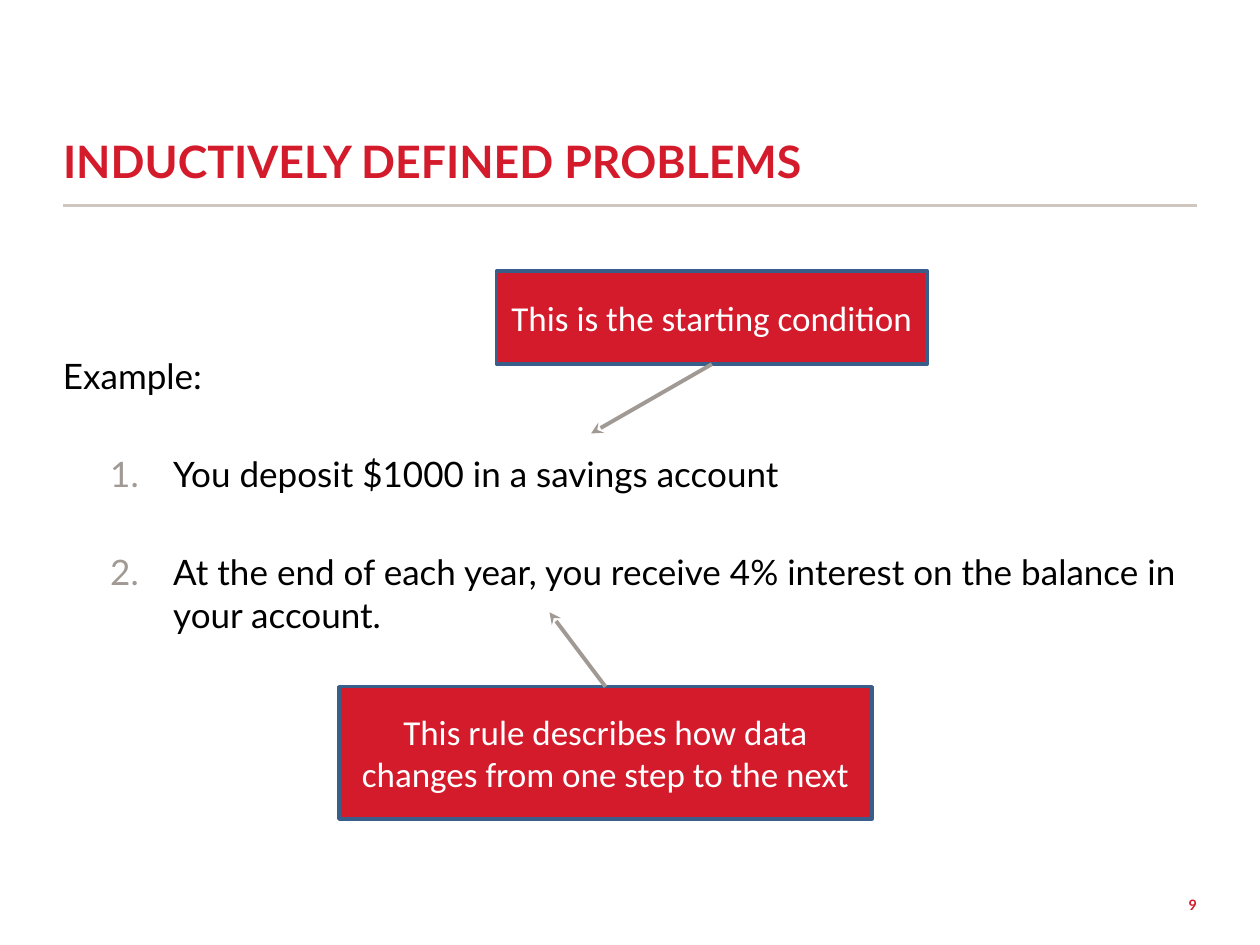
from lxml import etree
from pptx import Presentation
from pptx.dml.color import RGBColor
from pptx.enum import shapes, text
from pptx.oxml.ns import qn
from pptx.util import Pt

RED, GREY, RULE, OUTLINE = "D41B2C", "A19994", "CFC7BF", "395E8A"
LEFT, WIDTH = 36, 648
ALIGN, ANCHOR = text.PP_ALIGN, text.MSO_ANCHOR


def color(value):
    return RGBColor.from_string(value)


def write(frame, paragraphs, size=20, font="Lato", ink="000000", bold=False,
          align=ALIGN.LEFT, anchor=ANCHOR.TOP, inset=(0, 0), spacing=None, after=0):
    frame.word_wrap = True
    frame.auto_size = text.MSO_AUTO_SIZE.NONE
    frame.vertical_anchor = anchor
    frame.margin_left = frame.margin_right = Pt(inset[0])
    frame.margin_top = frame.margin_bottom = Pt(inset[1])
    for i, words in enumerate(paragraphs):
        line = frame.add_paragraph() if i else frame.paragraphs[0]
        line.alignment, line.space_after = align, Pt(after)
        if spacing:
            line.line_spacing = spacing
        run = line.add_run()
        run.text = words
        run.font.size, run.font.name, run.font.bold = Pt(size), font, bold
        run.font.color.rgb = color(ink)


def add_text(slide, box, paragraphs, **style):
    frame = slide.shapes.add_textbox(*map(Pt, box)).text_frame
    write(frame, paragraphs, **style)
    return frame


def add_line(slide, start, end, ink, weight, arrow=False):
    line = slide.shapes.add_connector(
        shapes.MSO_CONNECTOR.STRAIGHT, *map(Pt, (*start, *end)))
    line.line.color.rgb, line.line.width = color(ink), Pt(weight)
    if arrow:
        etree.SubElement(line.line._get_or_add_ln(), qn("a:tailEnd"), type="stealth")
    etree.SubElement(line._element.spPr, qn("a:effectLst"))


def number(paragraph):
    props = paragraph._p.get_or_add_pPr()
    props.set("marL", str(Pt(63)))
    props.set("indent", str(Pt(-36)))
    bullet_color = etree.SubElement(props, qn("a:buClr"))
    etree.SubElement(bullet_color, qn("a:srgbClr"), val=GREY)
    etree.SubElement(props, qn("a:buFont"), typeface="+mj-lt")
    etree.SubElement(props, qn("a:buAutoNum"), type="arabicPeriod")


def add_heading(slide, box, words):
    left, top, width, height = box
    title = slide.shapes.title
    title.left, title.top, title.width, title.height = map(Pt, box)
    write(title.text_frame, [words], size=25.5, ink=RED, bold=True, anchor=ANCHOR.BOTTOM)
    rule_y = top + height + 10
    add_line(slide, (left, rule_y), (left + width, rule_y), RULE, 2)


def add_example(slide, box, intro, steps):
    frame = add_text(slide, box, [intro, *steps], spacing=1.04, after=31)
    for step in frame.paragraphs[1:]:
        number(step)


def add_callout(slide, box, words, reach):
    """Boxed remark; its arrow leaves the top or bottom edge by the offset reach."""
    left, top, width, height = box
    note = slide.shapes.add_shape(shapes.MSO_SHAPE.RECTANGLE, *map(Pt, box))
    note.shadow.inherit = False
    note.fill.solid()
    note.fill.fore_color.rgb = color(RED)
    note.line.color.rgb, note.line.width = color(OUTLINE), Pt(2)
    write(note.text_frame, [words], font="Calibri", ink="FFFFFF",
          align=ALIGN.CENTER, anchor=ANCHOR.MIDDLE, inset=(7.2, 3.6))
    dx, dy = reach
    x, y = left + width / 2, top + (height if dy > 0 else 0)
    add_line(slide, (x, y), (x + dx, y + dy), GREY, 2.25, arrow=True)


def main():
    deck = Presentation()
    deck.slide_width, deck.slide_height = Pt(720), Pt(540)
    slide = deck.slides.add_slide(deck.slide_layouts.get_by_name("Title Only"))

    # Title and rule
    add_heading(slide, (LEFT, 39, WIDTH, 68.3), "INDUCTIVELY DEFINED PROBLEMS")

    # Slide number
    add_text(slide, (516, 512, 168, 10), ["9"], size=8.2, ink=RED, bold=True,
             align=ALIGN.RIGHT, anchor=ANCHOR.MIDDLE)

    # Example with numbered steps
    add_example(slide, (LEFT, 201.6, WIDTH, 287), "Example:", [
        "You deposit $1000 in a savings account",
        "At the end of each year, you receive 4% interest on the balance in your account.",
    ])

    # Callouts
    add_callout(slide, (283.7, 154.8, 246.2, 53.3), "This is the starting condition",
                reach=(-69, 39.6))
    add_callout(slide, (193.7, 392.4, 304.6, 75.6),
                "This rule describes how data changes from one step to the next",
                reach=(-32, -42.5))

    deck.save("out.pptx")


if __name__ == "__main__":
    main()
